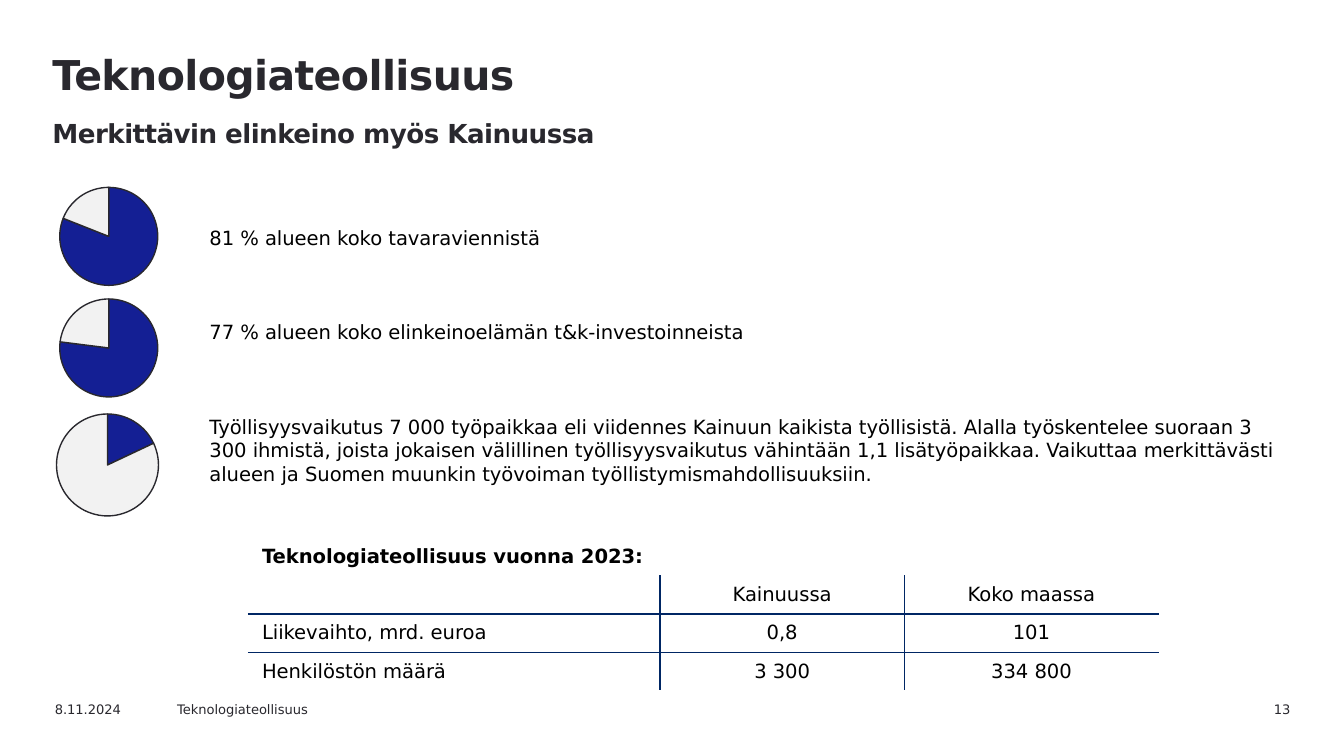
from lxml import etree
from pptx import Presentation
from pptx.chart.data import CategoryChartData as ChartData
from pptx.dml.color import RGBColor as RGB
from pptx.enum.chart import XL_CHART_TYPE as Kind
from pptx.enum.text import MSO_ANCHOR as Anchor, PP_ALIGN as Align
from pptx.oxml import parse_xml
from pptx.oxml.ns import nsdecls, qn
from pptx.util import Inches, Pt

FONT = "DejaVu Sans"
INK = RGB(0x29, 0x28, 0x2E)
BLACK = RGB(0, 0, 0)
BLUE = RGB(0x14, 0x1F, 0x94)
PALE = RGB(0xF2, 0xF2, 0xF2)
NAVY = RGB(0x00, 0x26, 0x64)

PIES = [(81, 0.31, 1.26, 1), (77, 0.31, 2.09, 1), (18, 0.28, 2.94, 1.04)]
FACTS = [
    "81 % alueen koko tavaraviennistä",
    "77 % alueen koko elinkeinoelämän t&k-investoinneista",
    "Työllisyysvaikutus 7 000 työpaikkaa eli viidennes Kainuun kaikista "
    "työllisistä. Alalla työskentelee suoraan 3 300 ihmistä, joista jokaisen "
    "välillinen työllisyysvaikutus vähintään 1,1 lisätyöpaikkaa. Vaikuttaa "
    "merkittävästi alueen ja Suomen muunkin työvoiman "
    "työllistymismahdollisuuksiin.",
]
ROWS = [
    ["Teknologiateollisuus vuonna 2023:", "", ""],
    ["", "Kainuussa", "Koko maassa"],
    ["Liikevaihto, mrd. euroa", "0,8", "101"],
    ["Henkilöstön määrä", "3 300", "334 800"],
]


def style(para, size, color, bold=False, align=Align.LEFT):
    para.alignment = align
    for run in para.runs:
        font = run.font
        font.name, font.size, font.bold = FONT, Pt(size), bold
        font.color.rgb = color


def add_text(slide, box, text):
    frame = slide.shapes.add_textbox(*map(Inches, box)).text_frame
    frame.word_wrap = True
    frame.text = text
    return frame


def add_title(slide, box):
    frame = add_text(slide, box,
                     "Teknologiateollisuus\nMerkittävin elinkeino myös Kainuussa")
    frame.margin_left = frame.margin_top = 0
    for para, size in zip(frame.paragraphs, (22, 14)):
        style(para, size, INK, True)
        para.line_spacing = Pt(27)
        para.runs[0].font._element.set("spc", "-30")


def add_facts(slide, box):
    frame = add_text(slide, box, "\n".join(FACTS))
    for i, para in enumerate(frame.paragraphs):
        style(para, 10.5, BLACK)
        if i:
            para.space_before = Pt(38)


def add_pie(slide, box, share):
    data = ChartData()
    data.categories = ["1", "2"]
    data.add_series("Series 1", (share, 100 - share))
    chart = slide.shapes.add_chart(Kind.PIE, *map(Inches, box), data).chart
    chart.has_legend = chart.has_title = False
    chart.font.name, chart.font.size = FONT, Pt(18)
    chart.font.color.rgb = INK
    plot = chart.plots[0]
    plot.vary_by_categories = False
    for i, color in enumerate((BLUE, PALE)):
        form = plot.series[0].points[i].format
        form.fill.solid()
        form.fill.fore_color.rgb = color
        form.line.color.rgb = INK
        form.line.width = Pt(0.75)
    set_inset(chart, 0.135)


def set_inset(chart, gap):
    """Keep an equal margin, as a share of the chart, round the pie."""
    area = chart._chartSpace.chart.plotArea
    for old in area.findall(qn("c:layout")):
        area.remove(old)
    layout = parse_xml(f"<c:layout {nsdecls('c')}><c:manualLayout/></c:layout>")
    sizes = dict(x=gap, y=gap, w=1 - 2 * gap, h=1 - 2 * gap)
    values = dict(layoutTarget="inner", xMode="edge", yMode="edge", **sizes)
    for tag, val in values.items():
        etree.SubElement(layout[0], qn("c:" + tag)).set("val", str(val))
    area.insert(0, layout)


def set_lines(cell, sides):
    props = cell._tc.get_or_add_tcPr()
    for i, side in enumerate(sides):
        props.insert(i, parse_xml(
            f'<a:ln{side} {nsdecls("a")} w="{Pt(1)}"><a:solidFill>'
            f'<a:srgbClr val="{NAVY}"/></a:solidFill></a:ln{side}>'))


def add_figures(slide, box):
    last, end = len(ROWS) - 1, len(ROWS[0]) - 1
    table = slide.shapes.add_table(last + 1, end + 1, *map(Inches, box)).table
    table.first_row = table.horz_banding = False
    for col, width in zip(table.columns, (3.06, 1.82, 1.89)):
        col.width = Inches(width)
    for r, row in enumerate(ROWS):
        for c, text in enumerate(row):
            cell = table.cell(r, c)
            cell.text = text
            cell.vertical_anchor = Anchor.MIDDLE
            cell.fill.background()
            para = cell.text_frame.paragraphs[0]
            para.font.size = Pt(10.5)
            style(para, 10.5, BLACK, r == 0, Align.CENTER if c else Align.LEFT)
            if r:
                inner = dict(L=c > 0, R=c < end, T=r > 1, B=r < last)
                set_lines(cell, [side for side, on in inner.items() if on])
    table.cell(0, 0).merge(table.cell(0, end))


def add_footer(slide, top):
    parts = [("8.11.2024", 0.31, 1, Align.LEFT),
             ("Teknologiateollisuus", 1.22, 1.42, Align.LEFT),
             ("13", 8.76, 0.94, Align.RIGHT)]
    for text, left, width, align in parts:
        frame = add_text(slide, (left, top, width, 0.18), text)
        style(frame.paragraphs[0], 7, INK, align=align)


def main():
    deck = Presentation()
    deck.slide_width = Inches(10)
    deck.slide_height = deck.slide_width * 9 // 16
    slide = deck.slides.add_slide(deck.slide_layouts[6])
    add_title(slide, (0.39, 0.36, 8.63, 0.75))
    add_facts(slide, (1.46, 1.63, 8.19, 2.42))
    for share, left, top, size in PIES:
        add_pie(slide, (left, top, size, size), share)
    add_figures(slide, (1.85, 4, 6.77, 1.14))
    add_footer(slide, 5.17)
    deck.save("out.pptx")


if __name__ == "__main__":
    main()
